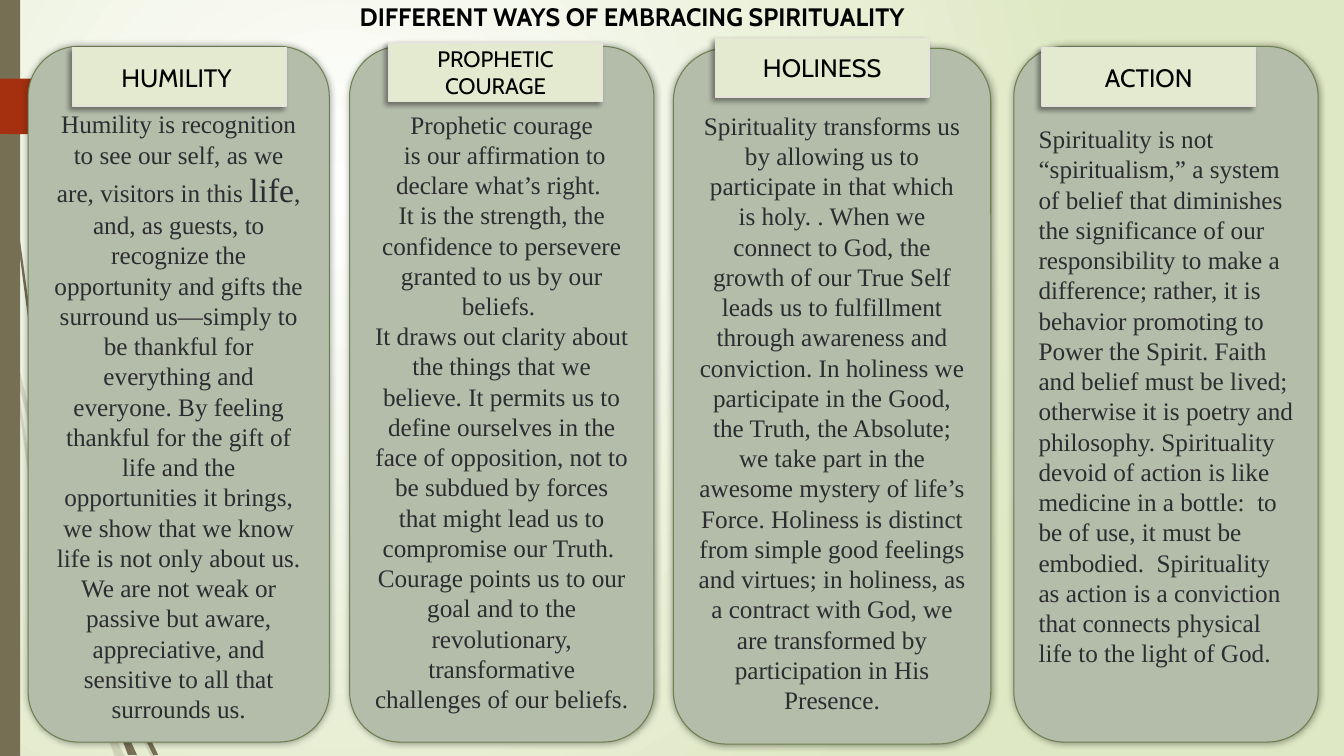
import pptx
import pptx.util
import pptx.dml.color
import pptx.enum.shapes
import pptx.enum.text
import pptx.oxml
import pptx.oxml.ns

Cm = pptx.util.Cm
Pt = pptx.util.Pt
PP_ALIGN = pptx.enum.text.PP_ALIGN
MSO_ANCHOR = pptx.enum.text.MSO_ANCHOR
MSO_SHAPE = pptx.enum.shapes.MSO_SHAPE

TITLE = "DIFFERENT WAYS OF EMBRACING SPIRITUALITY"

HUMILITY = [[
    ("Humility is recognition to see our self, as we are, visitors in this ", 18),
    ("life", 24),
    (", and, as guests, to recognize the opportunity and gifts the surround us—simply to "
     "be thankful for everything and everyone. By feeling thankful for the gift of life and "
     "the opportunities it brings, we show that we know life is not only about us. We are not "
     "weak or passive but aware, appreciative, and sensitive to all that surrounds us.", 18),
]]
COURAGE = [
    [("Prophetic courage", 18)],
    [(" is our affirmation to declare what’s right. ", 18)],
    [("It is the strength, the confidence to persevere granted to us by our beliefs. ", 18)],
    [("It draws out clarity about the things that we believe. It permits us to define "
      "ourselves in the face of opposition, not to be subdued by forces that might lead us to "
      "compromise our Truth.  Courage points us to our goal and to the revolutionary, "
      "transformative challenges of our beliefs.", 18)],
]
HOLINESS = [[
    ("Spirituality transforms us by allowing us to participate in that which is holy. . When we "
     "connect to God, the growth of our True Self leads us to fulfillment through awareness and "
     "conviction. In holiness we participate in the Good, the Truth, the Absolute; we take part "
     "in the awesome mystery of life’s Force. Holiness is distinct from simple good feelings and "
     "virtues; in holiness, as a contract with God, we are transformed by participation in His "
     "Presence.", 18),
]]
ACTION = [[
    ("Spirituality is not “spiritualism,” a system of belief that diminishes the significance of "
     "our responsibility to make a difference; rather, it is behavior promoting to Power the "
     "Spirit. Faith and belief must be lived; otherwise it is poetry and philosophy. "
     "Spirituality devoid of action is like medicine in a bottle:  to be of use, it must be "
     "embodied.  Spirituality as action is a conviction that connects physical life to the "
     "light of God.", 18),
]]

PALE_STEMS = [
    [(58, 522), (84, 599), (85, 586), (62, 520), (36, 435), (14, 345), (17, 376), (36, 450)],
    [(92, 607), (88, 596), (88, 610), (123, 694), (150, 751), (155, 751), (127, 692)],
    [(119, 751), (124, 751), (105, 711)],
    [(93, 683), (70, 619), (31, 469), (17, 376), (11, 350), (28, 470), (65, 621), (92, 693), (101, 714)],
    [(101, 714), (114, 751), (119, 751)],
    [(96, 692), (93, 683), (99, 707), (119, 751), (105, 711)],
]
DARK_STEMS = [
    [(7, 110), (17, 233), (33, 355), (56, 477), (57, 481), (55, 453), (36, 355), (19, 232),
     (8, 109), (4, 0), (3, 0)],
    [(113, 649), (110, 641), (111, 656), (132, 708), (152, 749), (157, 749), (136, 706)],
    [(133, 749), (136, 749), (122, 719)],
    [(117, 722), (127, 749), (131, 749)],
    [(116, 706), (110, 691), (117, 722), (130, 749), (133, 749), (122, 719)],
]
RED_MARKER = [(173, 108), (148, 133), (146, 134), (0, 133), (0, 78), (146, 78), (148, 79), (173, 104)]


def rgb(value):
    return pptx.dml.color.RGBColor.from_string(value)


class SpiritualitySlide:
    heading_font = "Cabin"
    body_font = "Times New Roman"
    black = "000000"
    ink = "2C2D30"
    olive = "766F54"
    red = "A53010"

    def __init__(self, deck):
        self.slide = deck.slides.add_slide(deck.slide_layouts[5])
        self.shapes = self.slide.shapes

    def backdrop(self, centre, edge):
        fill = self.slide.background.fill
        fill.gradient()
        for stop, color, position in zip(fill.gradient_stops, (centre, edge), (0, 1)):
            stop.color.rgb = rgb(color)
            stop.position = position
        linear = self.slide.element.find(".//" + pptx.oxml.ns.qn("a:lin"))
        radial = pptx.oxml.parse_xml(
            f'<a:path {pptx.oxml.ns.nsdecls("a")} path="circle">'
            '<a:fillToRect l="50000" t="50000" r="100000" b="100000"/></a:path>')
        linear.getparent().replace(linear, radial)

    def paint(self, shape, fill, line=None, width=0):
        shape.shadow.inherit = False
        shape.fill.solid()
        shape.fill.fore_color.rgb = rgb(fill)
        if line:
            shape.line.color.rgb = rgb(line)
            shape.line.width = Pt(width)
        else:
            shape.line.fill.background()

    def cast_shadow(self, shape, blur, distance, degrees):
        effects = shape.element.spPr.find(pptx.oxml.ns.qn("a:effectLst"))
        effects.append(pptx.oxml.parse_xml(
            f'<a:outerShdw {pptx.oxml.ns.nsdecls("a")} blurRad="{Pt(blur)}" dist="{Pt(distance)}" '
            f'dir="{degrees * 60000}" algn="ctr" rotWithShape="0"><a:srgbClr val="000000">'
            '<a:alpha val="40000"/></a:srgbClr></a:outerShdw>'))

    def outline(self, points, fill, opacity=100):
        builder = self.shapes.build_freeform(*points[0], scale=Cm(0.0254))
        builder.add_line_segments(points[1:], close=True)
        shape = builder.convert_to_shape()
        self.paint(shape, fill)
        if opacity < 100:
            color = shape.element.spPr.find(".//" + pptx.oxml.ns.qn("a:srgbClr"))
            color.append(pptx.oxml.parse_xml(
                f'<a:alpha {pptx.oxml.ns.nsdecls("a")} val="{opacity * 1000}"/>'))

    def box(self, kind, left, top, width, height, fill, line=None, line_width=0):
        shape = self.shapes.add_shape(kind, Cm(left), Cm(top), Cm(width), Cm(height))
        self.paint(shape, fill, line, line_width)
        return shape

    def style(self, paragraph, font, color, align, size=None, bold=False):
        paragraph.alignment = align
        paragraph.font.name = font
        paragraph.font.color.rgb = rgb(color)
        paragraph.font.bold = bold
        if size:
            paragraph.font.size = Pt(size)

    def title(self, text):
        title = self.shapes.title
        title.left, title.top, title.width, title.height = Cm(8.81), Cm(-0.1), Cm(15.52), Cm(1.02)
        frame = title.text_frame
        frame.text = text
        frame.word_wrap = False
        frame.auto_size = pptx.enum.text.MSO_AUTO_SIZE.NONE
        frame.vertical_anchor = MSO_ANCHOR.MIDDLE
        self.style(frame.paragraphs[0], self.heading_font, self.black, PP_ALIGN.LEFT, 18, True)

    def card(self, left, top, width, inset, align, paragraphs):
        card = self.box(MSO_SHAPE.ROUNDED_RECTANGLE, left, top, width, 17.53, "B4BCAA", "6D804F", 0.75)
        self.cast_shadow(card, 5, 0, 0)
        frame = card.text_frame
        frame.word_wrap = True
        frame.vertical_anchor = MSO_ANCHOR.TOP
        frame.margin_top = Cm(inset)
        for index, runs in enumerate(paragraphs):
            paragraph = frame.add_paragraph() if index else frame.paragraphs[0]
            self.style(paragraph, self.body_font, self.ink, align)
            for text, size in runs:
                run = paragraph.add_run()
                run.text = text
                run.font.size = Pt(size)

    def tab(self, left, top, text, size):
        tab = self.box(MSO_SHAPE.RECTANGLE, left, top, 5.38, 1.48, "E3EACF", "E5E3DB", 1.25)
        self.cast_shadow(tab, 4, 3, 135)
        frame = tab.text_frame
        frame.word_wrap = True
        frame.vertical_anchor = MSO_ANCHOR.MIDDLE
        frame.text = text
        self.style(frame.paragraphs[0], self.heading_font, self.black, PP_ALIGN.CENTER, size)


def main():
    deck = pptx.Presentation()
    deck.slide_width, deck.slide_height = Cm(33.87), Cm(19.05)
    page = SpiritualitySlide(deck)
    page.backdrop("FFFFFF", "DFE8C4")
    for stem in PALE_STEMS:
        page.outline(stem, page.olive, 20)
    for stem in DARK_STEMS:
        page.outline(stem, page.olive)
    page.box(MSO_SHAPE.RECTANGLE, 0, 0, 0.51, 19.05, page.olive)
    page.outline(RED_MARKER, page.red)

    page.card(0.71, 1.17, 7.59, 1.2, PP_ALIGN.CENTER, HUMILITY)
    page.card(25.55, 1.17, 7.67, 1.57, PP_ALIGN.LEFT, ACTION)
    page.card(16.97, 1.22, 8, 1.16, PP_ALIGN.CENTER, HOLINESS)
    page.card(8.81, 1.17, 7.67, 1.2, PP_ALIGN.CENTER, COURAGE)

    page.tab(1.83, 1.2, "HUMILITY ", 18)
    page.tab(26.26, 1.2, "ACTION", 18)
    page.tab(18.03, 0.97, "HOLINESS", 18)
    page.tab(9.8, 1.08, "PROPHETIC COURAGE", 16)
    page.title(TITLE)
    deck.save("out.pptx")


if __name__ == "__main__":
    main()
